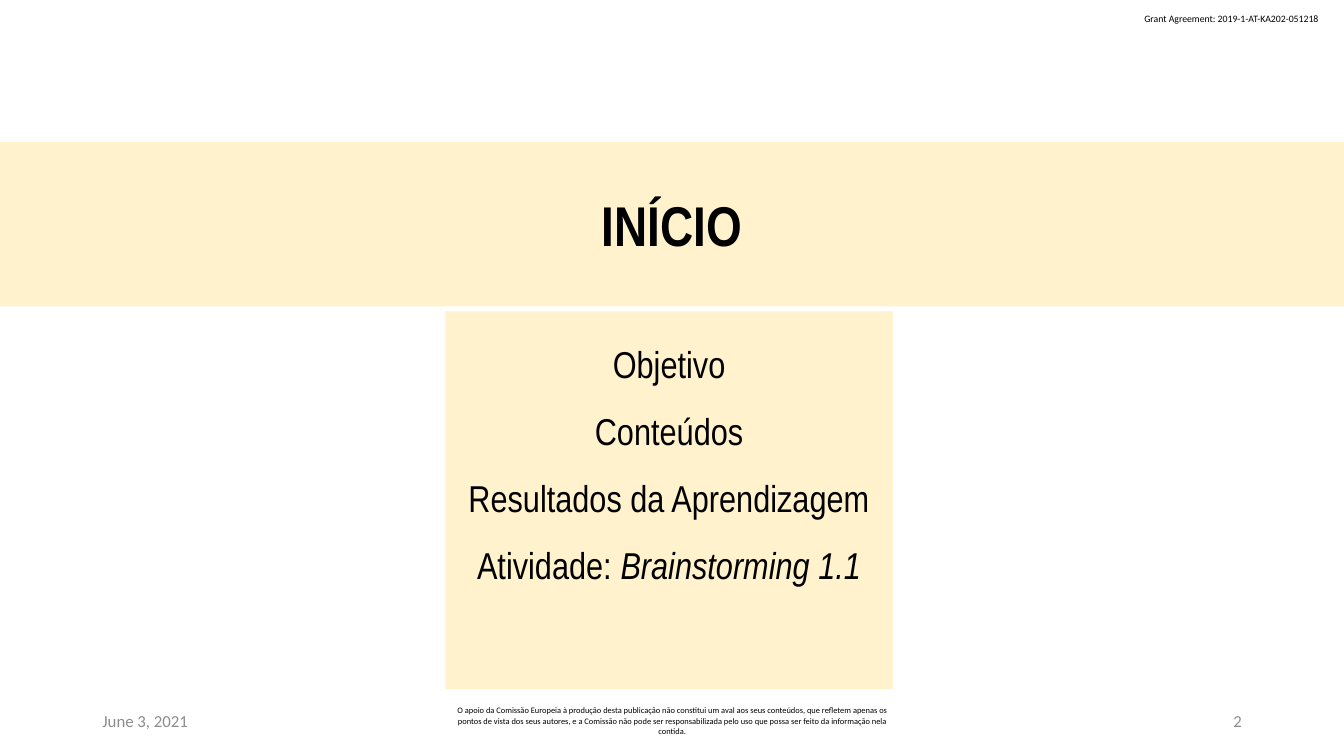
"""Build the INÍCIO section slide with its agenda panel and footer."""
from pptx import Presentation
from pptx.dml.color import RGBColor
from pptx.enum.shapes import MSO_SHAPE
from pptx.enum.text import MSO_ANCHOR, PP_ALIGN
from pptx.util import Cm, Pt

CREAM = RGBColor(0xFF, 0xF2, 0xCC)
BLACK = RGBColor(0x00, 0x00, 0x00)
GREY = RGBColor(0x8C, 0x8C, 0x8C)
RECTANGLE = MSO_SHAPE.RECTANGLE
LEFT, CENTER, RIGHT = PP_ALIGN.LEFT, PP_ALIGN.CENTER, PP_ALIGN.RIGHT
TOP, MIDDLE = MSO_ANCHOR.TOP, MSO_ANCHOR.MIDDLE

presentation = Presentation()
presentation.slide_width = Cm(33.86)
presentation.slide_height = Cm(19.05)
slide = presentation.slides.add_slide(presentation.slide_layouts[6])


def add_text(text, left, top, width, height, *, size, font="Calibri", color=BLACK,
             bold=False, align=LEFT, anchor=MIDDLE, fill=None, spacing=None, wrap=True):
    box = tuple(Cm(length) for length in (left, top, width, height))
    if fill is None:
        holder = slide.shapes.add_textbox(*box)
    else:
        holder = slide.shapes.add_shape(RECTANGLE, *box)
        holder.shadow.inherit = False
        holder.fill.solid()
        holder.fill.fore_color.rgb = fill
        holder.line.fill.background()
    frame = holder.text_frame
    frame.word_wrap = wrap
    frame.vertical_anchor = anchor
    if fill is not None:
        frame.margin_left = frame.margin_right = Cm(0.34)
        frame.margin_top = frame.margin_bottom = Cm(0.17)
    frame.text = text
    for paragraph in frame.paragraphs:
        paragraph.alignment = align
        if spacing:
            paragraph.line_spacing = spacing
        for run in paragraph.runs:
            run.font.name = font
            run.font.size = Pt(size)
            run.font.bold = bold
            run.font.color.rgb = color
    return frame


add_text("Grant Agreement: 2019-1-AT-KA202-051218", 28.58, 0.2, 5, 0.56,
         size=7, anchor=TOP, wrap=False)

FOOTER_TOP, FOOTER_HEIGHT = 17.65, 1.02
disclaimer = (
    "O apoio da Comissão Europeia à produção desta publicação não constitui um aval "
    "aos seus conteúdos, que refletem apenas os pontos de vista dos seus autores, e a "
    "Comissão não pode ser responsabilizada pelo uso que possa ser feito da informação "
    "nela contida."
)
for text, left, width, size, color, align in (
    ("June 3, 2021", 2.33, 7.62, 12, GREY, LEFT),
    (disclaimer, 11.22, 11.43, 6, BLACK, CENTER),
    ("2", 23.92, 7.62, 12, GREY, RIGHT),
):
    add_text(text, left, FOOTER_TOP, width, FOOTER_HEIGHT,
             size=size, color=color, align=align)

add_text("INÍCIO", 0, 3.58, 33.86, 4.14, size=40, font="Arial Narrow",
         bold=True, align=CENTER, fill=CREAM)

agenda = add_text("Objetivo\nConteúdos\nResultados da Aprendizagem\nAtividade: ",
                  11.22, 7.85, 11.28, 9.52, size=26.7, font="Arial Narrow",
                  align=CENTER, anchor=TOP, fill=CREAM, spacing=1.5)
activity_name = agenda.paragraphs[-1].add_run()
activity_name.text = "Brainstorming 1.1"
activity_name.font.name = "Arial Narrow"
activity_name.font.size = Pt(26.7)
activity_name.font.italic = True
activity_name.font.color.rgb = BLACK

presentation.save("out.pptx")
